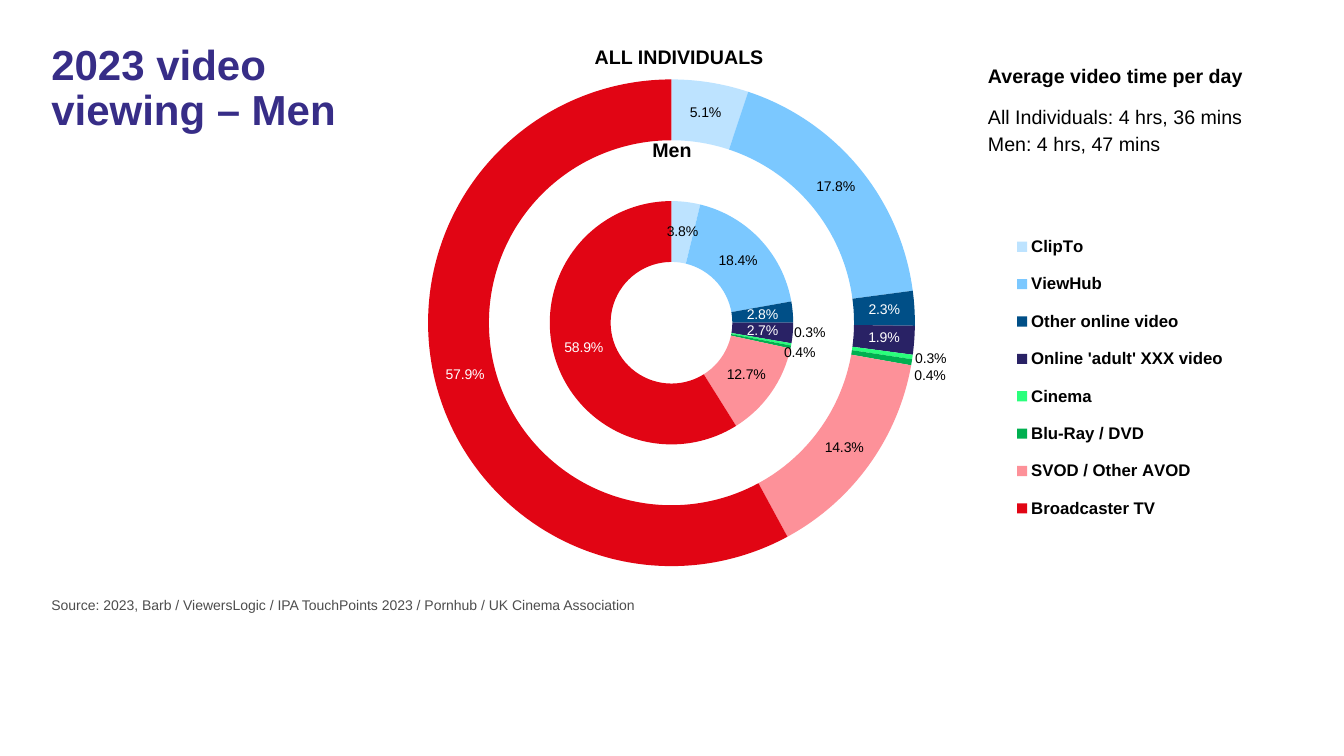
from lxml import etree
from pptx import Presentation, util as u
from pptx.chart.data import CategoryChartData
from pptx.dml.color import RGBColor
from pptx.enum import chart as charts, text
from pptx.oxml import parse_xml
from pptx.oxml.ns import nsdecls, qn

presentation = Presentation()
presentation.slide_width = u.Inches(13.33)
presentation.slide_height = u.Inches(7.5)
slide = presentation.slides.add_slide(presentation.slide_layouts[6])


def place(left, top, width, height):
    """Turn percentages of the slide's size into lengths."""
    across, down = presentation.slide_width / 100, presentation.slide_height / 100
    return int(left * across), int(top * down), int(width * across), int(height * down)


def style(font, size, color, bold=False):
    font.name, font.size, font.bold = "Arial", u.Pt(size), bold
    font.color.rgb = RGBColor.from_string(color)


LAYOUT = (
    "<c:layout {}><c:manualLayout>{}</c:manualLayout></c:layout>"
)

# Data: category, slice colour, label colour, men, all individuals
rows = [
    ("ClipTo", "BDE3FF", "000000", 3.8, 5.1),
    ("ViewHub", "7BC8FF", "000000", 18.4, 17.8),
    ("Other online video", "004F87", "FFFFFF", 2.8, 2.3),
    ("Online 'adult' XXX video", "292265", "FFFFFF", 2.7, 1.9),
    ("Cinema", "2AFF7C", "000000", 0.3, 0.3),
    ("Blu-Ray / DVD", "00B050", "000000", 0.4, 0.4),
    ("SVOD / Other AVOD", "FD9199", "000000", 12.7, 14.3),
    ("Broadcaster TV", "E10514", "FFFFFF", 58.9, 57.9),
]
data = CategoryChartData()
data.categories = [row[0] for row in rows]
data.add_series("Series 1", [row[3] for row in rows])
data.add_series("Series 2", [None] * len(rows))  # empty ring between the two
data.add_series("Series 3", [row[4] for row in rows])

# Doughnut chart
frame = slide.shapes.add_chart(
    charts.XL_CHART_TYPE.DOUGHNUT, *place(23.93, 2.13, 72.02, 81.07), data)
chart = frame.chart
chart.has_title = False
style(chart.font, 18, "000000")
plot = chart.plots[0]
plot.vary_by_categories = True
plot._element.find(qn("c:holeSize")).set("val", "47")

# Legend
chart.has_legend = True
legend = chart.legend
legend.position = charts.XL_LEGEND_POSITION.RIGHT
legend.include_in_layout = False
style(legend.font, 12, "000000", True)

# Manual places of the plot and the legend, as shares of the chart
plot_area = chart._chartSpace.chart.plotArea
for parent, target, box in [
    (plot_area, "inner", (0.11, 0.095, 0.503, 0.811)),
    (legend._element, None, (0.7, 0.33, 0.25, 0.52)),
]:
    for old in parent.findall(qn("c:layout")):
        parent.remove(old)
    parts = f'<c:layoutTarget val="{target}"/>' if target else ""
    parts += '<c:xMode val="edge"/><c:yMode val="edge"/>'
    parts += "".join(f'<c:{key} val="{share}"/>' for key, share in zip("xywh", box))
    layout = parse_xml(LAYOUT.format(nsdecls("c"), parts))
    if target:
        parent.insert(0, layout)
    else:
        parent.find(qn("c:legendPos")).addnext(layout)

# Slices and labels; the thinnest slices have their labels moved outside
label_shifts = {
    (0, 4): (0.05, -0.01), (0, 5): (0.04, 0.02),
    (2, 4): (0.05, 0.01), (2, 5): (0.05, 0.03),
}
for ring in (0, 2):
    series = plot.series[ring]
    labels = series.data_labels
    labels.show_percentage, labels.show_value = True, False
    labels.number_format, labels.number_format_is_linked = "0.0%", False
    style(labels.font, 10, "FFFFFF")
    for index, (_, slice_color, label_color, *_) in enumerate(rows):
        point = series.points[index]
        point.format.fill.solid()
        point.format.fill.fore_color.rgb = RGBColor.from_string(slice_color)
        point.format.line.fill.background()
        style(point.data_label.font, 10, label_color)
    for label in labels._element.findall(qn("c:dLbl")):
        label.find(qn("c:showVal")).set("val", "0")
        label.find(qn("c:showPercent")).set("val", "1")
        number_format = etree.Element(qn("c:numFmt"), formatCode="0.0%", sourceLinked="0")
        position = label.find(qn("c:idx"))
        position.addnext(number_format)
        shift = label_shifts.get((ring, int(position.get("val"))))
        if shift:
            parts = "".join(f'<c:{key} val="{share}"/>' for key, share in zip("xy", shift))
            position.addnext(parse_xml(LAYOUT.format(nsdecls("c"), parts)))

# Texts: wording, place, size, colour, bold, centred
column = 72.77
texts = [
    ("2023 video viewing – Men", (3.08, 5.2, 28.66, 36.8), 30, "372D87", True, False),
    ("Average video time per day", (column, 7.73, 28.66, 4.53), 14, "000000", True, False),
    ("All Individuals: 4 hrs, 36 mins", (column, 13.2, 22.43, 4.53), 14, "000000", False, False),
    ("Men: 4 hrs, 47 mins", (column, 16.8, 21.16, 4.53), 14, "000000", False, False),
    ("ALL INDIVIDUALS", (43.29, 5.33, 14.48, 4.53), 14, "000000", True, True),
    ("Men", (44.79, 17.6, 10.43, 4.53), 14, "000000", True, True),
    ("Source: 2023, Barb / ViewersLogic / IPA TouchPoints 2023 / Pornhub / UK Cinema Association",
     (3.08, 78.27, 93.02, 4.4), 10, "4D4D4D", False, False),
]
for wording, box, size, color, bold, centred in texts:
    shape = slide.shapes.add_textbox(*place(*box))
    shape.text_frame.word_wrap = True
    paragraph = shape.text_frame.paragraphs[0]
    paragraph.text = wording
    paragraph.alignment = text.PP_ALIGN.CENTER if centred else text.PP_ALIGN.LEFT
    paragraph.line_spacing = 0.9 if size == 30 else 1.0
    style(paragraph.font, size, color, bold)

presentation.save("out.pptx")
